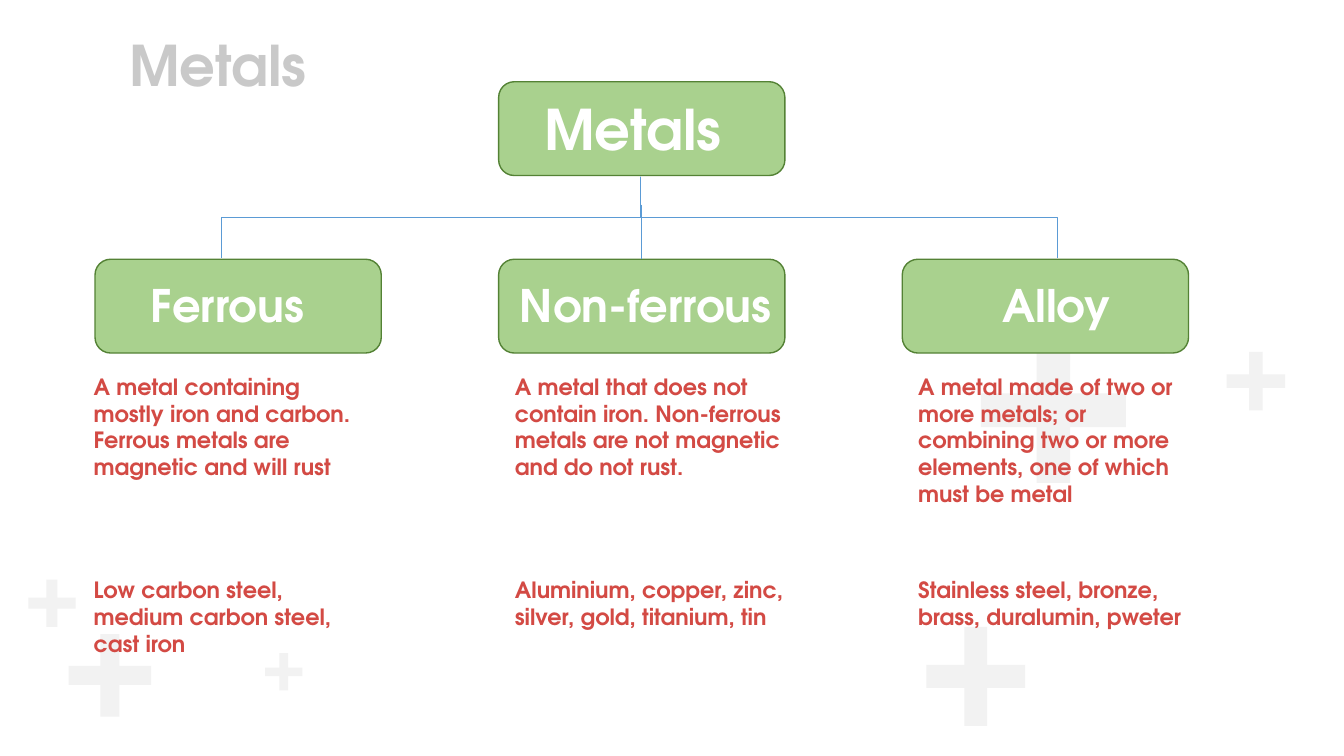
from dataclasses import dataclass

from lxml import etree
from pptx import Presentation
from pptx import util as u
from pptx.dml.color import RGBColor
from pptx.enum import shapes, text
from pptx.oxml import ns

FONT = "TeX Gyre Adventor"
COLOURS = {
    "title": "C9C9C9",
    "plus": "F2F2F2",
    "box": "A9D18E",
    "box_line": "548235",
    "branch": "5B9BD5",
    "label": "FFFFFF",
    "body": "D34A44",
}
BOX_WIDTH, BOX_HEIGHT = 204.5, 67
BOX_LEFT, BOX_STEP = 67.9, 288.3
ROOT_TOP, CLASS_TOP = 58.4, 185.2
DEFINITION_TOP, EXAMPLES_TOP = 262.8, 408
BODY_WIDTH = 212.4


@dataclass
class Plus:
    left: float
    top: float
    size: float


@dataclass
class Label:
    wording: str
    left: float
    top: float
    width: float
    height: float
    size: float
    colour: str = "label"
    alignment: text.PP_ALIGN = text.PP_ALIGN.LEFT


@dataclass
class MetalClass:
    heading: Label
    body_left: float
    definition: str
    examples: str


PLUSES = [
    Plus(700.6, 241.2, 103.7),
    Plus(661.7, 447.8, 70.6),
    Plus(49, 452.9, 59),
    Plus(876.2, 251.3, 41.8),
    Plus(20.2, 414, 33.8),
    Plus(189.4, 466.6, 26.6),
]
TITLE = Label("Metals", 85, 18, 745.9, 55.4, 40, "title")
ROOT = Label("Metals", 381.6, 64.1, 745.9, 55.4, 40)
CLASSES = [
    MetalClass(
        Label("Ferrous", 100.8, 195.1, 197.3, 46.1, 32), 59.8,
        "A metal containing mostly iron and carbon. "
        "Ferrous metals are magnetic and will rust",
        "Low carbon steel, medium carbon steel, cast iron"),
    MetalClass(
        Label("Non-ferrous", 364.3, 195.1, 204.5, 46.1, 32), 360.7,
        "A metal that does not contain iron. "
        "Non-ferrous metals are not magnetic and do not rust.",
        "Aluminium, copper, zinc, silver, gold, titanium, tin"),
    MetalClass(
        Label("Alloy", 652.3, 195.1, 204.5, 46.1, 32,
              alignment=text.PP_ALIGN.CENTER), 648.7,
        "A metal made of two or more metals; or combining two or more "
        "elements, one of which must be metal",
        "Stainless steel, bronze, brass, duralumin, pweter"),
]


def colour(name: str) -> RGBColor:
    return RGBColor.from_string(COLOURS[name])


def write_label(shape, label: Label) -> None:
    shape.left, shape.top = u.Pt(label.left), u.Pt(label.top)
    shape.width, shape.height = u.Pt(label.width), u.Pt(label.height)
    frame = shape.text_frame
    frame.text = label.wording
    frame.word_wrap = True
    frame.auto_size = text.MSO_AUTO_SIZE.NONE
    frame.vertical_anchor = text.MSO_ANCHOR.TOP
    paragraph = frame.paragraphs[0]
    paragraph.alignment = label.alignment
    paragraph.line_spacing = 1.0
    font = paragraph.runs[0].font
    font.name, font.size, font.bold = FONT, u.Pt(label.size), True
    font.color.rgb = colour(label.colour)


def add_label(slide, label: Label) -> None:
    write_label(slide.shapes.add_textbox(0, 0, 0, 0), label)


def add_figure(slide, kind: shapes.MSO_SHAPE, left: float, top: float,
               width: float, height: float, fill: str = "", line: str = "",
               line_width: float = 1):
    shape = slide.shapes.add_shape(
        kind, u.Pt(left), u.Pt(top), u.Pt(width), u.Pt(height))
    shape.shadow.inherit = False
    if fill:
        shape.fill.solid()
        shape.fill.fore_color.rgb = colour(fill)
    else:
        shape.fill.background()
    if line:
        shape.line.color.rgb = colour(line)
        shape.line.width = u.Pt(line_width)
    else:
        shape.line.fill.background()
    return shape


def add_box(slide, column: int, top: float) -> None:
    add_figure(slide, shapes.MSO_SHAPE.ROUNDED_RECTANGLE,
               BOX_LEFT + column * BOX_STEP, top, BOX_WIDTH, BOX_HEIGHT,
               "box", "box_line")


def add_branches(slide) -> None:
    # A square-cornered brace joins the root to the outer classes
    brace = add_figure(slide, shapes.MSO_SHAPE.RIGHT_BRACE,
                       427.7, -143.3, 57.6, 596.9,
                       line="branch", line_width=0.5)
    brace.rotation = 270
    brace.adjustments[0] = 0
    brace.adjustments[1] = 0.502
    # A straight line leads to the middle class
    stem = slide.shapes.add_connector(
        shapes.MSO_CONNECTOR.STRAIGHT,
        u.Pt(457.9), u.Pt(146.2), u.Pt(457.9), u.Pt(CLASS_TOP))
    stem.line.color.rgb = colour("branch")
    stem.line.width = u.Pt(0.5)
    properties = stem.element.find(ns.qn("p:spPr"))
    etree.SubElement(properties, ns.qn("a:effectLst"))


def main() -> None:
    presentation = Presentation()
    presentation.slide_width = u.Pt(960)
    presentation.slide_height = u.Pt(540)
    slide = presentation.slides.add_slide(presentation.slide_layouts[5])

    # Background pluses
    for plus in PLUSES:
        shape = add_figure(slide, shapes.MSO_SHAPE.CROSS, plus.left, plus.top,
                           plus.size, plus.size, "plus")
        shape.adjustments[0] = 0.384

    # Title
    write_label(slide.shapes.title, TITLE)

    # Tree boxes and branches
    add_box(slide, 1, ROOT_TOP)
    for column in range(len(CLASSES)):
        add_box(slide, column, CLASS_TOP)
    add_branches(slide)

    # Headings, definitions and examples
    add_label(slide, ROOT)
    for metal in CLASSES:
        add_label(slide, metal.heading)
        add_label(slide, Label(metal.definition, metal.body_left,
                               DEFINITION_TOP, BODY_WIDTH, 85, 16, "body"))
        add_label(slide, Label(metal.examples, metal.body_left,
                               EXAMPLES_TOP, BODY_WIDTH, 65.5, 16, "body"))

    presentation.save("out.pptx")


if __name__ == "__main__":
    main()
